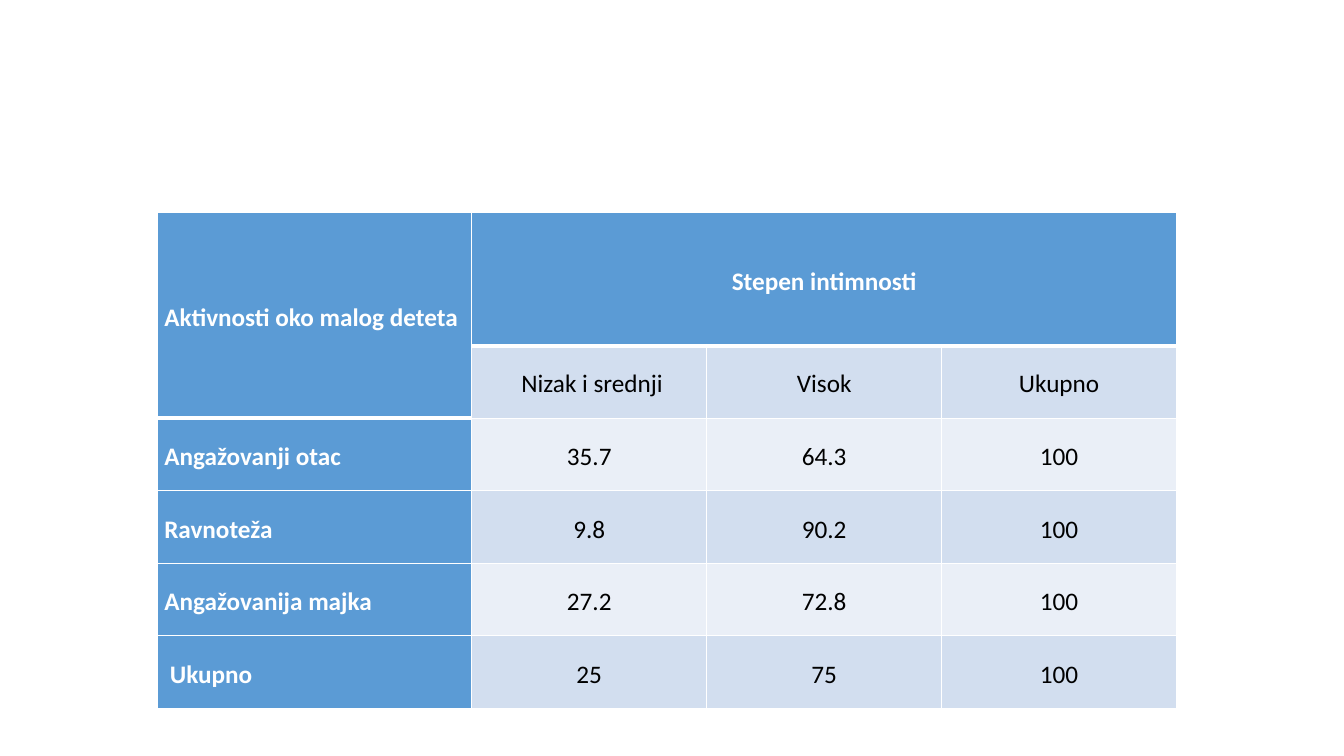
import pptx
import pptx.util
import pptx.dml.color
import pptx.enum.text
import lxml.etree
from pptx.util import Inches, Pt
from pptx.dml.color import RGBColor

HEADINGS = [
    ["Aktivnosti oko malog deteta", "Stepen intimnosti", "", ""],
    ["", " Nizak i srednji", "Visok", "Ukupno"],
]
ACTIVITIES = [
    ["Angažovanji otac", "35.7", "64.3", "100"],
    ["Ravnoteža", "9.8", "90.2", "100"],
    ["Angažovanija majka", "27.2", "72.8", "100"],
    [" Ukupno", "25", "75", "100"],
]
INTIMACY = HEADINGS + ACTIVITIES
COLUMN_WIDTHS = [3.12] + [2.33] * 3
ROW_HEIGHTS = [1.32] + [0.72] * 5

BLUE = RGBColor(0x5B, 0x9B, 0xD5)
BAND_DARK = RGBColor(0xD2, 0xDE, 0xEF)
BAND_LIGHT = RGBColor(0xEA, 0xEF, 0xF7)
WHITE = RGBColor(0xFF, 0xFF, 0xFF)
BLACK = RGBColor(0, 0, 0)


def add_border(cell, side, points):
    qn = pptx.oxml.ns.qn
    properties = cell._tc.get_or_add_tcPr()
    line = lxml.etree.SubElement(properties, qn(f"a:ln{side}"), w=str(Pt(points)))
    fill = lxml.etree.SubElement(line, qn("a:solidFill"))
    lxml.etree.SubElement(fill, qn("a:srgbClr"), val=str(WHITE))


def format_cell(cell, text, row, column):
    heading = row == 0 or column == 0
    header_end = 1 if column == 0 else 0
    top = 3 if row == header_end + 1 else 1
    bottom = 3 if row == header_end or (row, column) == (0, 0) else 1
    for side, points in zip("LRTB", (1, 1, top, bottom)):
        add_border(cell, side, points)
    cell.fill.solid()
    band = BAND_DARK if row % 2 else BAND_LIGHT
    cell.fill.fore_color.rgb = BLUE if heading else band
    cell.vertical_anchor = pptx.enum.text.MSO_ANCHOR.MIDDLE
    cell.margin_left = cell.margin_right = Inches(0.07)
    cell.margin_top = cell.margin_bottom = 0
    if not text:
        return
    cell.text = text
    paragraph = cell.text_frame.paragraphs[0]
    paragraph.line_spacing = 1.15
    paragraph.space_before = Pt(6)
    align = pptx.enum.text.PP_ALIGN
    paragraph.alignment = align.CENTER if column else align.LEFT
    paragraph.font.name = "Calibri"
    paragraph.font.size = Pt(18)
    paragraph.font.bold = heading
    paragraph.font.color.rgb = WHITE if heading else BLACK


def main():
    deck = pptx.Presentation()
    deck.slide_width, deck.slide_height = Inches(13.33), Inches(7.5)
    slide = deck.slides.add_slide(deck.slide_layouts[6])
    table = slide.shapes.add_table(
        len(INTIMACY), len(COLUMN_WIDTHS), Inches(1.56), Inches(2.11),
        Inches(sum(COLUMN_WIDTHS)), Inches(sum(ROW_HEIGHTS))).table
    for column, width in zip(table.columns, COLUMN_WIDTHS):
        column.width = Inches(width)
    for row, height in zip(table.rows, ROW_HEIGHTS):
        row.height = Inches(height)
    table.cell(0, 0).merge(table.cell(1, 0))
    table.cell(0, 1).merge(table.cell(0, 3))
    for row, texts in enumerate(INTIMACY):
        for column, text in enumerate(texts):
            format_cell(table.cell(row, column), text, row, column)
    deck.save("out.pptx")


if __name__ == "__main__":
    main()
